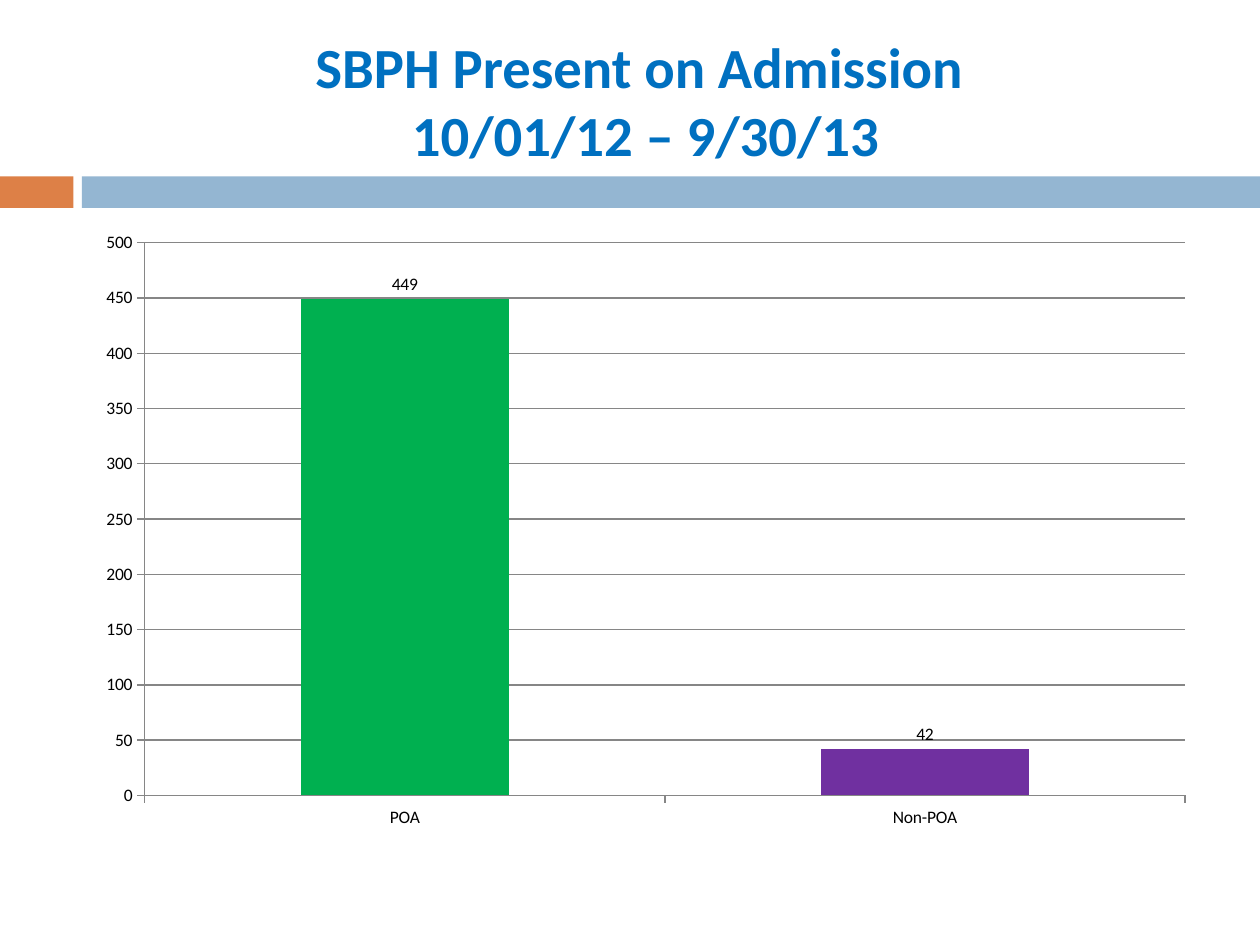
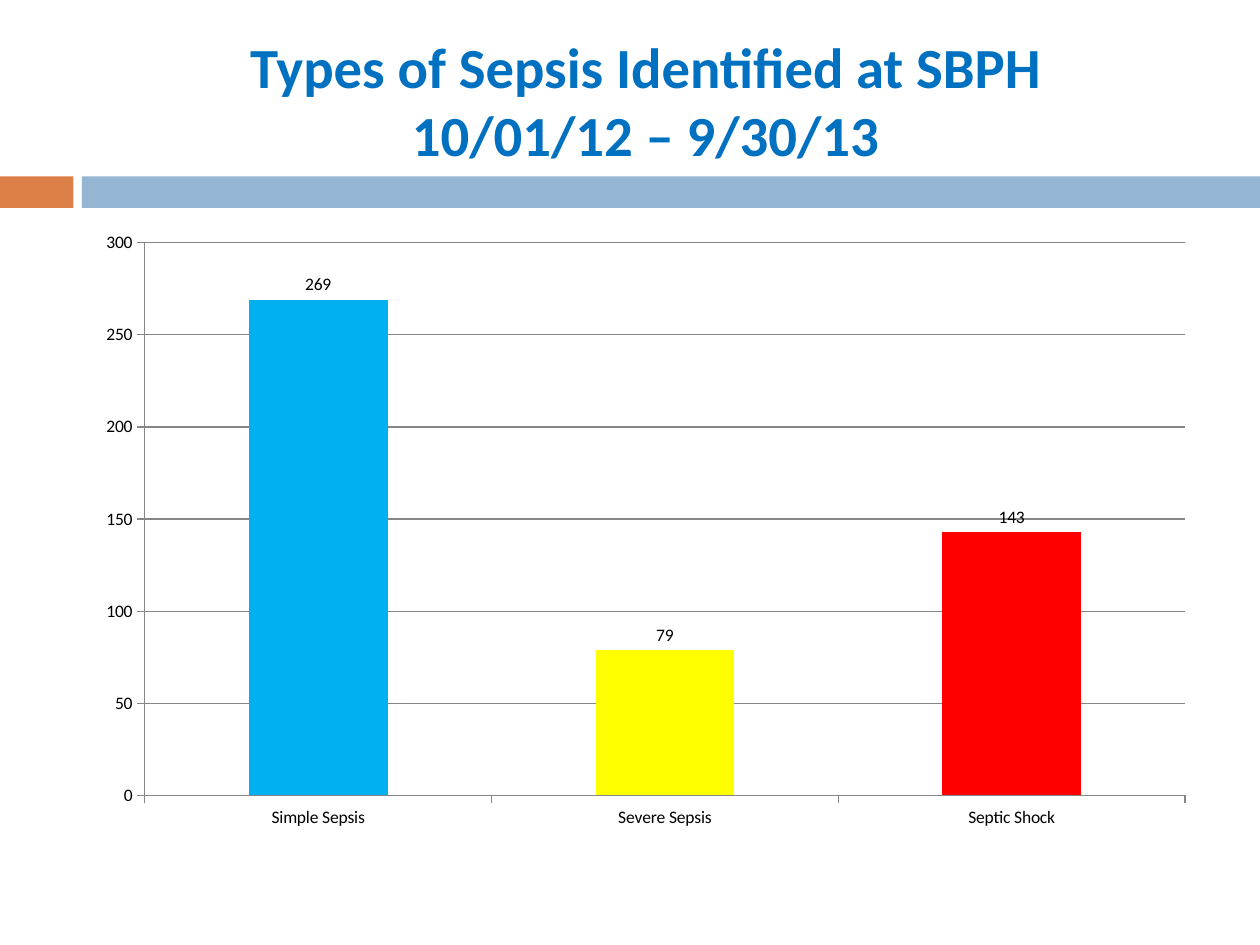
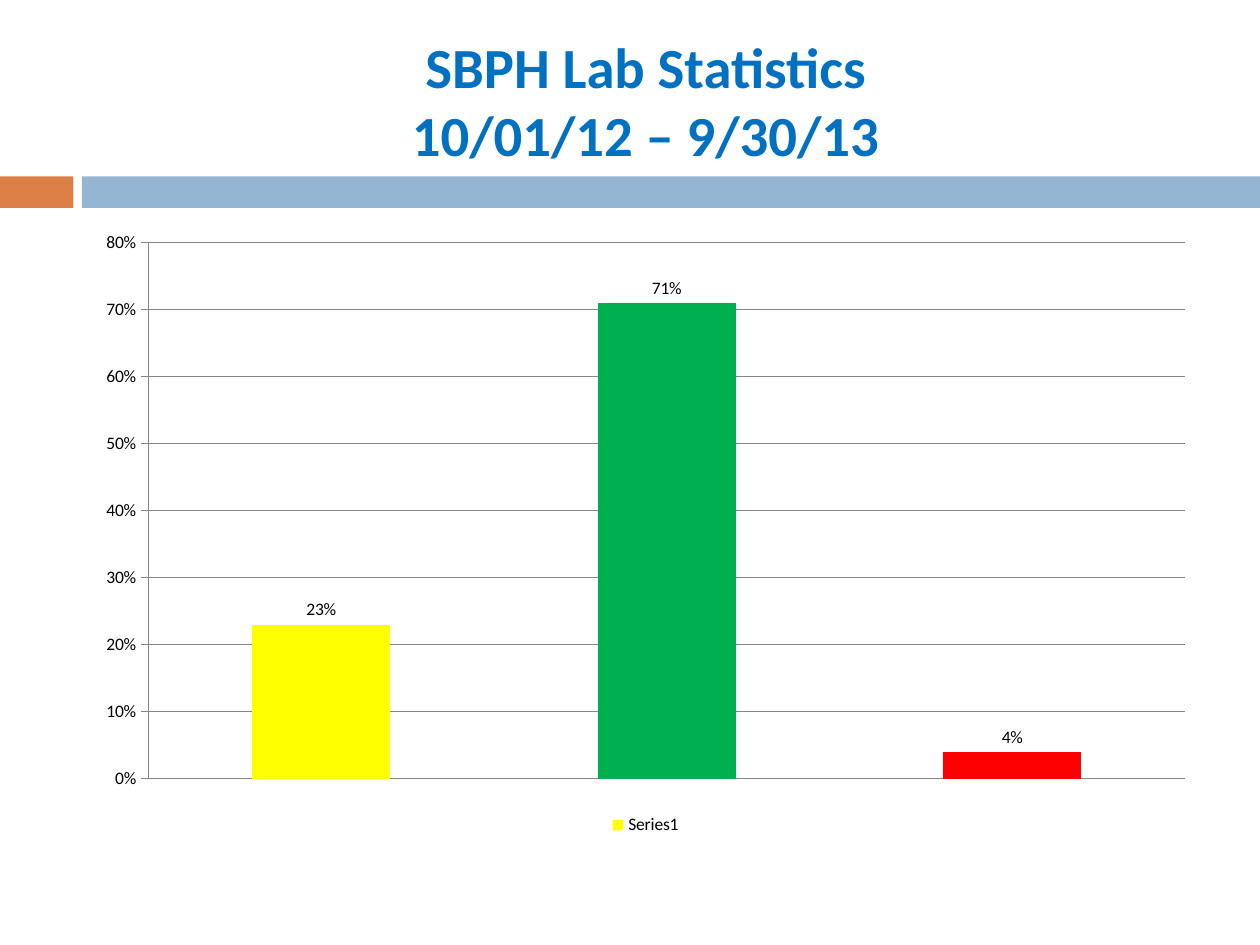
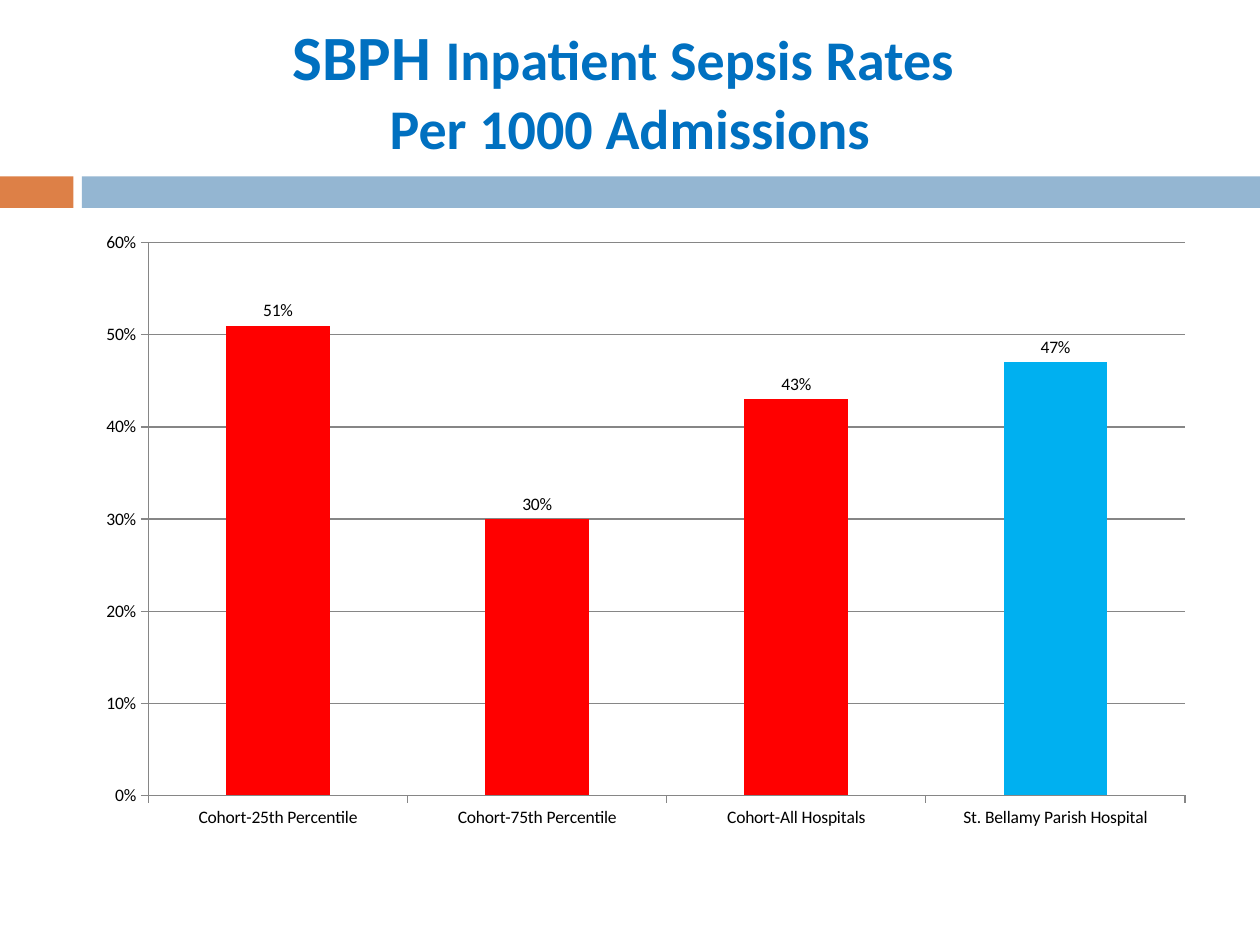
from dataclasses import dataclass
from typing import NamedTuple

from pptx import Presentation
from pptx import util as u
from pptx.chart import data
from pptx.dml.color import RGBColor
from pptx.enum import chart as ce
from pptx.enum import shapes, text


# Theme: colours, font and type sizes
@dataclass(frozen=True)
class Theme:
    font: str = "Calibri"
    title: str = "0070C0"
    ink: str = "000000"
    line: str = "868686"
    orange: str = "DD8047"
    steel: str = "94B6D2"
    green: str = "00B050"
    purple: str = "7030A0"
    sky: str = "00B0F0"
    yellow: str = "FFFF00"
    red: str = "FF0000"
    head: float = 32.4
    big: float = 36
    mid: float = 32
    small: float = 10
    rule: float = 0.75


T = Theme()

# Grid: 120 columns by 90 rows
WIDTH, HEIGHT = u.Inches(10), u.Inches(7.5)
COLS, ROWS = 120, 90


class Box(NamedTuple):
    col: float
    row: float
    wide: float
    high: float

    def place(self) -> tuple[int, int, int, int]:
        x, y = WIDTH / COLS, HEIGHT / ROWS
        return (round(self.col * x), round(self.row * y),
                round(self.wide * x), round(self.high * y))


class Band(NamedTuple):
    box: Box
    hue: str


class Part(NamedTuple):
    words: str
    size: float = T.head


class Bar(NamedTuple):
    label: str
    value: float
    hue: str


@dataclass(frozen=True)
class Page:
    title: list[list[Part]]
    bars: list[Bar]
    top: float
    form: str = "General"
    name: str = "Series 1"
    legend: bool = False
    head: Box = Box(8, 3, 107, 13)


PLOT = Box(8, 21, 107, 59)
BANDS = [
    Band(Box(0, 16.8, 7, 3), T.orange),
    Band(Box(7.8, 16.8, COLS - 7.8, 3), T.steel),
]
DATES = [Part("10/01/12 – 9/30/13")]

# Content
PAGES = [
    Page([[Part("SBPH Present on Admission ")], DATES],
         [Bar("POA", 449, T.green), Bar("Non-POA", 42, T.purple)], 500),
    Page([[Part("Types of Sepsis Identified at SBPH")], DATES],
         [Bar("Simple Sepsis", 269, T.sky),
          Bar("Severe Sepsis", 79, T.yellow),
          Bar("Septic Shock", 143, T.red)], 300),
    Page([[Part("SBPH Lab Statistics")], DATES],
         [Bar("1", 0.23, T.yellow), Bar("2", 0.71, T.green),
          Bar("3", 0.04, T.red)], 0.8, "0%", "Series1", legend=True),
    Page([[Part("SBPH ", T.big), Part("Inpatient Sepsis Rates ", T.mid)],
          [Part("Per 1000 Admissions", T.mid)]],
         [Bar("Cohort-25th Percentile", 0.51, T.red),
          Bar("Cohort-75th Percentile", 0.3, T.red),
          Bar("Cohort-All Hospitals", 0.43, T.red),
          Bar("St. Bellamy Parish Hospital", 0.47, T.sky)],
         0.6, "0%", head=Box(6, 1, 108, 15)),
]


def paint(fill, hue: str) -> None:
    fill.solid()
    fill.fore_color.rgb = RGBColor.from_string(hue)


def style(font, size: float, hue: str, bold: bool = False) -> None:
    font.name, font.size, font.bold = T.font, u.Pt(size), bold
    font.color.rgb = RGBColor.from_string(hue)


def stroke(line) -> None:
    line.width = u.Pt(T.rule)
    line.color.rgb = RGBColor.from_string(T.line)


# Bands are drawn on a slide, then moved to its layout behind the rest
def add_bands(slide) -> None:
    tree = slide.slide_layout.shapes._spTree
    for spot, band in enumerate(BANDS, start=2):
        rect = slide.shapes.add_shape(shapes.MSO_SHAPE.RECTANGLE,
                                      *band.box.place())
        rect.shadow.inherit = False
        paint(rect.fill, band.hue)
        rect.line.fill.background()
        tree.insert(spot, rect._element)


def add_title(slide, page: Page) -> None:
    head = slide.shapes.title
    head.left, head.top, head.width, head.height = page.head.place()
    frame = head.text_frame
    frame.word_wrap = True
    frame.auto_size = text.MSO_AUTO_SIZE.NONE
    frame.vertical_anchor = text.MSO_ANCHOR.MIDDLE
    para = frame.paragraphs[0]
    para.alignment = text.PP_ALIGN.CENTER
    for row, parts in enumerate(page.title):
        if row:
            para.add_line_break()
        for part in parts:
            run = para.add_run()
            run.text = part.words
            style(run.font, part.size, T.title, bold=True)


def add_bars(slide, page: Page) -> None:
    feed = data.CategoryChartData(number_format=page.form)
    feed.categories = [bar.label for bar in page.bars]
    feed.add_series(page.name, [bar.value for bar in page.bars])
    chart = slide.shapes.add_chart(ce.XL_CHART_TYPE.COLUMN_CLUSTERED,
                                   *PLOT.place(), feed).chart
    chart.has_title = False
    style(chart.font, T.small, T.ink)
    chart.has_legend = page.legend
    if page.legend:
        chart.legend.position = ce.XL_LEGEND_POSITION.BOTTOM
        chart.legend.include_in_layout = False

    # Axes
    cats, vals = chart.category_axis, chart.value_axis
    for axis in (cats, vals):
        axis.major_tick_mark = ce.XL_TICK_MARK.OUTSIDE
        axis.minor_tick_mark = ce.XL_TICK_MARK.NONE
        stroke(axis.format.line)
    cats.has_major_gridlines = False
    cats.visible = not page.legend
    vals.has_major_gridlines = True
    stroke(vals.major_gridlines.format.line)
    vals.minimum_scale, vals.maximum_scale = 0, page.top
    vals.tick_labels.number_format = page.form
    vals.tick_labels.number_format_is_linked = False

    # Columns and their values
    plot = chart.plots[0]
    plot.gap_width = 150
    plot.vary_by_categories = False
    series = plot.series[0]
    series.invert_if_negative = False
    paint(series.format.fill, page.bars[0].hue)
    for spot, bar in enumerate(page.bars):
        paint(series.points[spot].format.fill, bar.hue)
    tags = series.data_labels
    tags.show_value = True
    tags.position = ce.XL_LABEL_POSITION.OUTSIDE_END
    tags.number_format = page.form
    tags.number_format_is_linked = False


def main() -> None:
    deck = Presentation()
    deck.slide_width, deck.slide_height = WIDTH, HEIGHT
    layout = deck.slide_layouts.get_by_name("Title Only")
    for page in PAGES:
        slide = deck.slides.add_slide(layout)
        if page is PAGES[0]:
            add_bands(slide)
        add_title(slide, page)
        add_bars(slide, page)
    deck.save("out.pptx")


if __name__ == "__main__":
    main()
